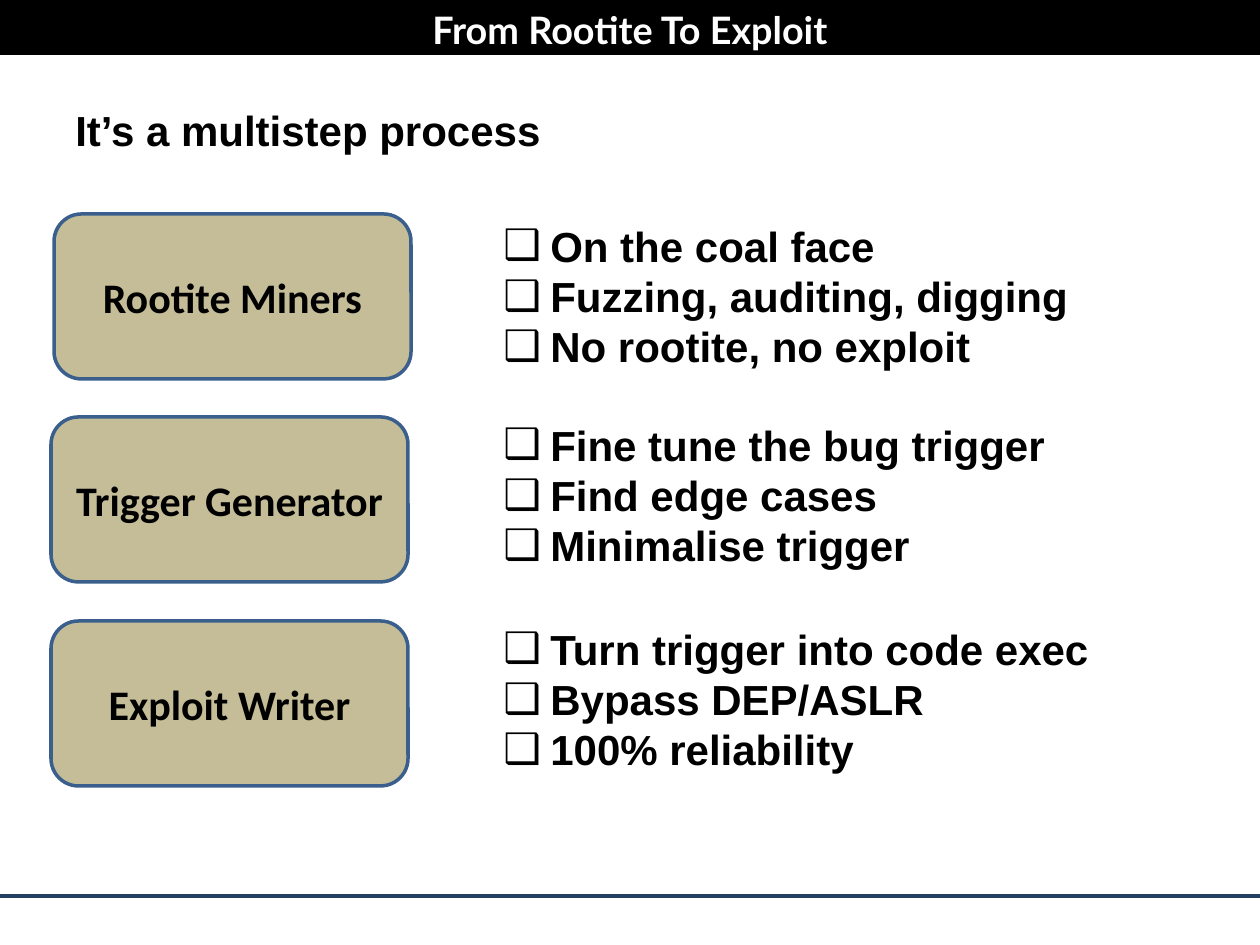
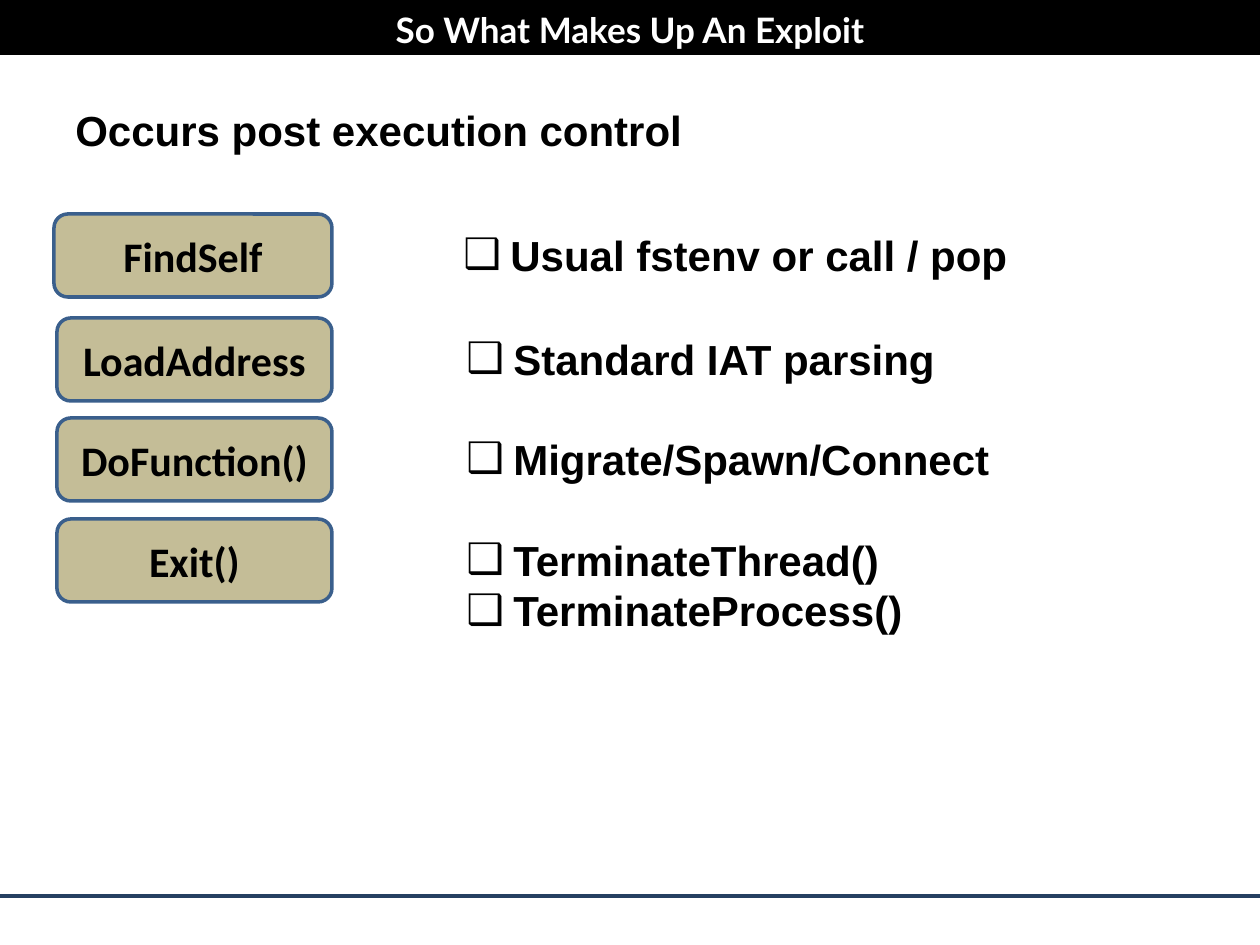
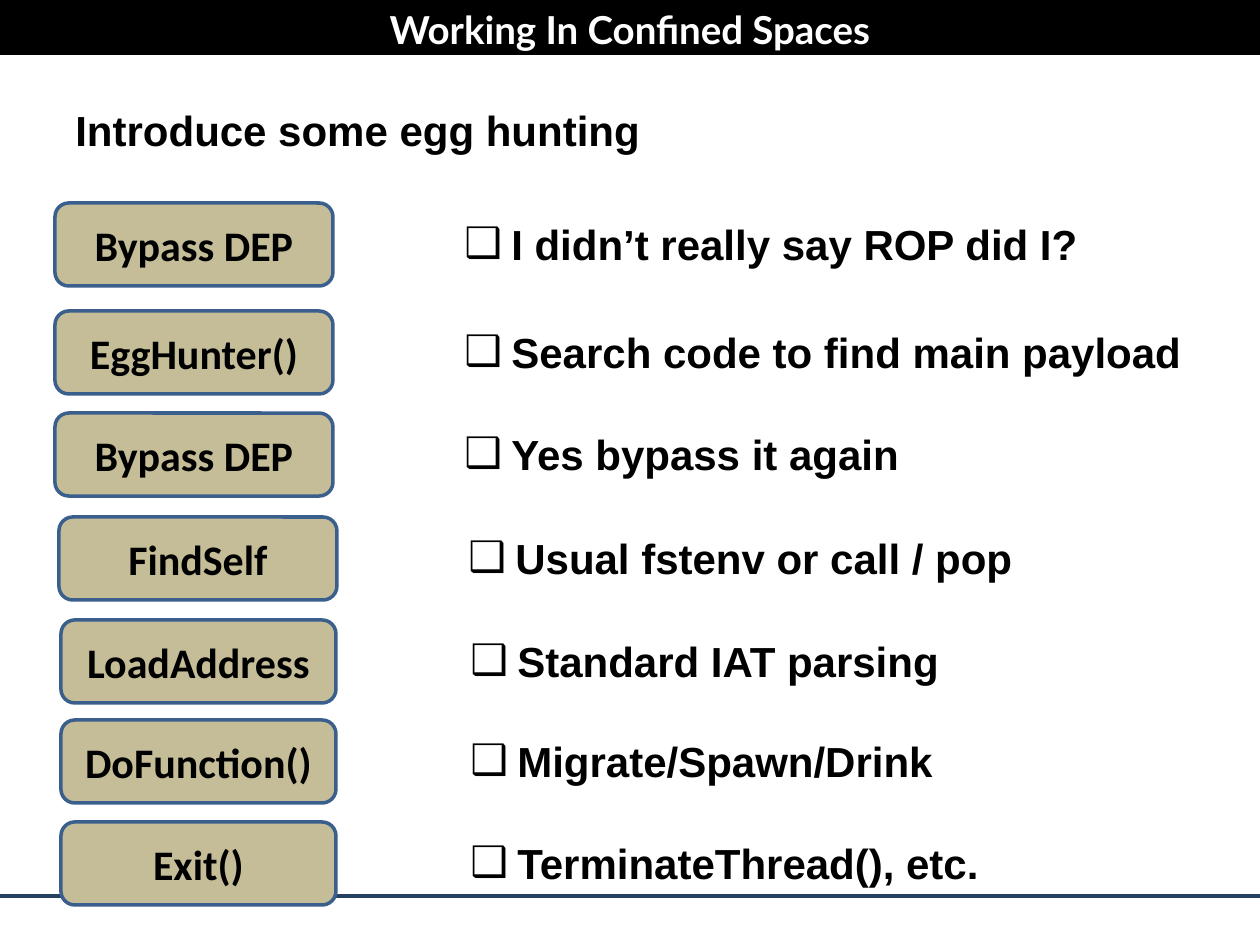
"""Build three slides on the steps that lead to an exploit and its parts."""
from dataclasses import dataclass

from lxml import etree
from pptx import Presentation
from pptx import util as u
from pptx.dml.color import RGBColor
from pptx.enum import shapes, text
from pptx.oxml.ns import qn

EMU_PER_PX = 914400 / 126
SLIDE_WIDTH, SLIDE_HEIGHT = 1260, 945
BLACK, WHITE = "000000", "FFFFFF"
TAN, STEEL, NAVY = "C4BD97", "3A5F8C", "254061"
BODY_FONT, LABEL_FONT, TITLE_FONT = "Arial", "Calibri", "Lato"
BODY_SIZE = 24
RULE_WIDTH = 2
BULLET = "❑"
HANGING = 47
POINT_HEIGHT, POINTS_PADDING = 51, 12


@dataclass(frozen=True)
class Box:
    left: int
    top: int
    width: int
    height: int


@dataclass(frozen=True)
class Step:
    label: str
    box: Box
    points: tuple[str, ...]
    points_left: int
    points_top: int
    points_width: int = 704


@dataclass(frozen=True)
class Page:
    title: str
    title_size: float
    heading: str
    steps: tuple[Step, ...]


def stage(label: str, left: int, top: int, points_top: int, *points: str) -> Step:
    """Describe a tall step of the process."""
    return Step(label, Box(left, top, 357, 165), points, 491, points_top)


def part(label: str, left: int, top: int, width: int, *points: str,
         points_width: int = 704) -> Step:
    """Describe a low step whose points sit at a fixed offset from its box."""
    return Step(label, Box(left, top, width, 83), points, left + 397, top + 9, points_width)


PAGES = (
    Page("From Rootite To Exploit", 21.6, "It’s a multistep process", (
        stage("Rootite Miners", 54, 214, 214,
              "On the coal face", "Fuzzing, auditing, digging", "No rootite, no exploit"),
        stage("Trigger Generator", 51, 417, 413,
              "Fine tune the bug trigger", "Find edge cases", "Minimalise trigger"),
        stage("Exploit Writer", 51, 621, 617,
              "Turn trigger into code exec", "Bypass DEP/ASLR", "100% reliability"),
    )),
    Page("So What Makes Up An Exploit", 20, "Occurs post execution control", (
        part("FindSelf", 54, 214, 278, "Usual fstenv or call / pop"),
        part("LoadAddress", 57, 318, 275, "Standard IAT parsing"),
        part("DoFunction()", 57, 418, 275, "Migrate/Spawn/Connect"),
        part("Exit()", 57, 519, 275, "TerminateThread()", "TerminateProcess()"),
    )),
    Page("Working In Confined Spaces", 22, "Introduce some egg hunting", (
        part("Bypass DEP", 55, 203, 278, "I didn’t really say ROP did I?"),
        part("EggHunter()", 55, 311, 278, "Search code to find main payload",
             points_width=752),
        part("Bypass DEP", 55, 413, 278, "Yes bypass it again"),
        part("FindSelf", 59, 517, 278, "Usual fstenv or call / pop"),
        part("LoadAddress", 61, 620, 275, "Standard IAT parsing"),
        part("DoFunction()", 61, 720, 275, "Migrate/Spawn/Drink"),
        part("Exit()", 61, 822, 275, "TerminateThread(), etc."),
    )),
)


def px(length: int) -> u.Emu:
    """Turn pixels into EMU."""
    return u.Emu(round(length * EMU_PER_PX))


def color(value: str) -> RGBColor:
    """Turn a hex string into a colour."""
    return RGBColor.from_string(value)


def place(box: Box) -> tuple[u.Emu, ...]:
    """Give the position and size of a box in EMU."""
    return px(box.left), px(box.top), px(box.width), px(box.height)


def set_font(paragraph, name: str, size: float, ink: str) -> None:
    """Set the bold font of a paragraph."""
    font = paragraph.font
    font.name, font.size, font.bold = name, u.Pt(size), True
    font.color.rgb = color(ink)


def center(frame, name: str, size: float, ink: str) -> None:
    """Centre a one-line text frame both ways and set its font."""
    frame.vertical_anchor = text.MSO_ANCHOR.MIDDLE
    paragraph = frame.paragraphs[0]
    paragraph.alignment = text.PP_ALIGN.CENTER
    set_font(paragraph, name, size, ink)


def add_block(shape, kind, box: Box, fill: str):
    """Add a filled shape without a shadow."""
    block = shape.add_shape(kind, *place(box))
    block.shadow.inherit = False
    block.fill.solid()
    block.fill.fore_color.rgb = color(fill)
    return block


def add_shared_bands(slide) -> None:
    """Put the footer rule and the title band on the layout of a slide."""
    layout = slide.slide_layout
    for placeholder in list(layout.placeholders):
        if placeholder.placeholder_format.type != shapes.PP_PLACEHOLDER.TITLE:
            layout.shapes.element.remove(placeholder.element)
    rule = slide.shapes.add_connector(
        shapes.MSO_CONNECTOR.STRAIGHT, 0, px(896), px(SLIDE_WIDTH), px(896))
    rule.line.color.rgb = color(NAVY)
    rule.line.width = u.Pt(RULE_WIDTH)
    etree.SubElement(rule.element.spPr, qn("a:effectLst"))
    band = add_block(slide.shapes, shapes.MSO_SHAPE.RECTANGLE,
                     Box(0, 0, SLIDE_WIDTH, 55), BLACK)
    band.line.fill.background()
    for shared in (rule, band):
        layout.shapes.element.append(shared.element)


def add_title(slide, page: Page) -> None:
    """Move the title onto the band and format it."""
    title = slide.shapes.title
    title.left, title.top, title.width, title.height = place(Box(0, 0, SLIDE_WIDTH, 59))
    title.text_frame.text = page.title
    title.text_frame.auto_size = text.MSO_AUTO_SIZE.NONE
    center(title.text_frame, TITLE_FONT, page.title_size, WHITE)


def add_heading(slide, heading: str) -> None:
    """Add the line that opens the slide."""
    frame = slide.shapes.add_textbox(*place(Box(63, 98, 1134, 60))).text_frame
    frame.word_wrap = True
    frame.text = heading
    set_font(frame.paragraphs[0], BODY_FONT, BODY_SIZE, BLACK)


def add_bullet(paragraph) -> None:
    """Give a paragraph a box bullet and a hanging indent."""
    properties = paragraph._p.get_or_add_pPr()
    properties.set("marL", str(px(HANGING)))
    properties.set("indent", str(-px(HANGING)))
    etree.SubElement(properties, qn("a:buFont"), typeface=BODY_FONT)
    etree.SubElement(properties, qn("a:buChar"), char=BULLET)


def add_step(slide, step: Step) -> None:
    """Add the labelled box of a step and its points."""
    label_box = add_block(slide.shapes, shapes.MSO_SHAPE.ROUNDED_RECTANGLE, step.box, TAN)
    label_box.line.color.rgb = color(STEEL)
    label_box.line.width = u.Pt(RULE_WIDTH)
    label_box.text_frame.text = step.label
    center(label_box.text_frame, LABEL_FONT, BODY_SIZE, BLACK)

    points_height = POINTS_PADDING + POINT_HEIGHT * len(step.points)
    points_box = Box(step.points_left, step.points_top, step.points_width, points_height)
    frame = slide.shapes.add_textbox(*place(points_box)).text_frame
    frame.word_wrap = True
    frame.auto_size = text.MSO_AUTO_SIZE.SHAPE_TO_FIT_TEXT
    frame.text = "\n".join(step.points)
    for paragraph in frame.paragraphs:
        add_bullet(paragraph)
        set_font(paragraph, BODY_FONT, BODY_SIZE, BLACK)


def main() -> None:
    """Build and save the slides."""
    deck = Presentation()
    deck.slide_width, deck.slide_height = px(SLIDE_WIDTH), px(SLIDE_HEIGHT)
    title_only = deck.slide_layouts[5]
    for number, page in enumerate(PAGES):
        slide = deck.slides.add_slide(title_only)
        if number == 0:
            add_shared_bands(slide)
        add_title(slide, page)
        add_heading(slide, page.heading)
        for step in page.steps:
            add_step(slide, step)
    deck.save("out.pptx")


if __name__ == "__main__":
    main()
